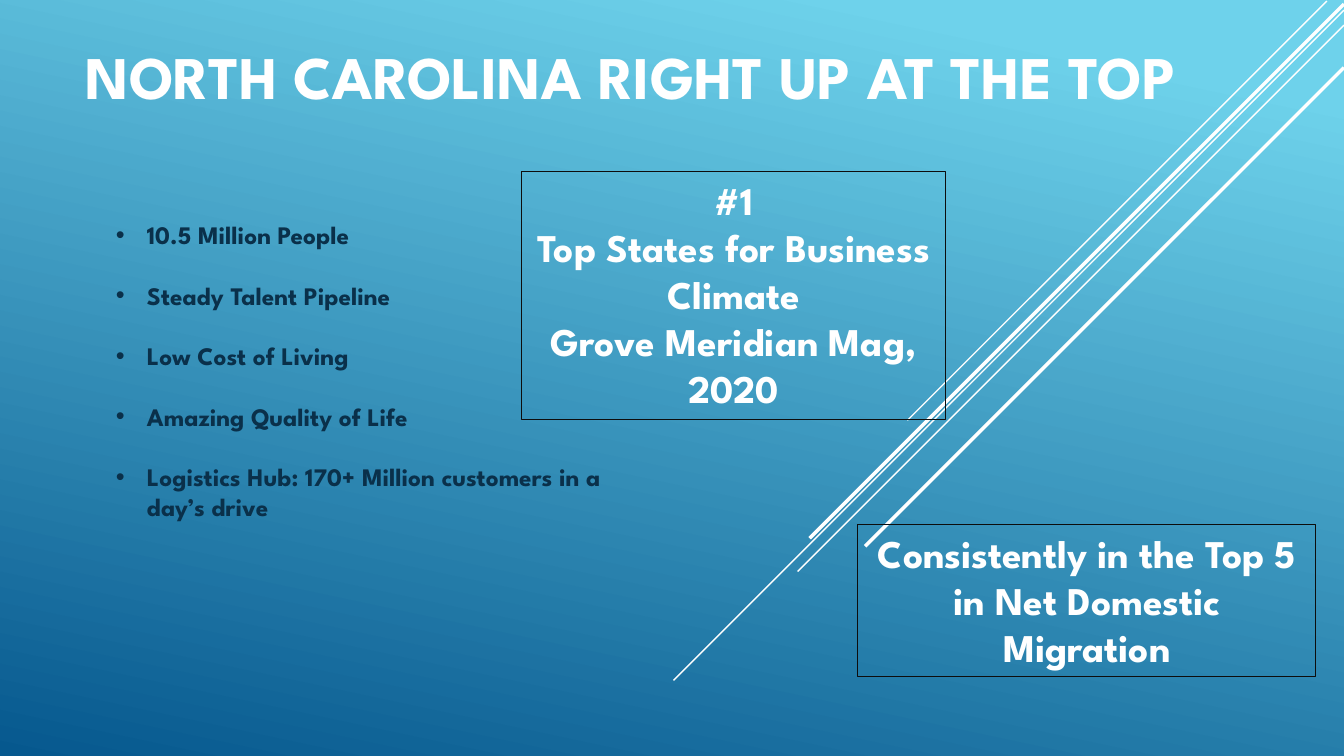
from lxml.etree import SubElement
from pptx import Presentation
from pptx.dml.color import RGBColor
from pptx.enum.shapes import MSO_CONNECTOR, MSO_SHAPE
from pptx.enum.text import MSO_ANCHOR, MSO_AUTO_SIZE, PP_ALIGN
from pptx.oxml.ns import qn
from pptx.util import Inches, Pt

# Content
TITLE = "NORTH CAROLINA RIGHT UP AT THE TOP"
STRENGTHS = [
    "10.5 Million People",
    "Steady Talent Pipeline",
    "Low Cost of Living",
    "Amazing Quality of Life",
    "Logistics Hub: 170+ Million customers in a day’s drive",
]
RANKINGS = [
    ((5.17, 1.7, 4.21, 2.46),
     ["#1", "Top States for Business Climate", "Grove Meridian Mag, 2020"]),
    ((8.51, 5.2, 4.54, 1.51),
     ["Consistently in the Top 5 in Net Domestic Migration"]),
]
# Diagonal rays: start x, start y, drop (each falls at 45 degrees), width in points
RAYS = [
    (13.16, 0.01, 4.16, 1),
    (13.33, 0.1, 6.65, 1),
    (13.33, 0.25, 5.42, 1),
    (13.33, 0.04, 5.3, 2.5),
    (13.33, 0.67, 4.75, 2.5),
]

# Style
FONT = "League Spartan"
WHITE = RGBColor(0xFF, 0xFF, 0xFF)
NAVY = RGBColor(0x0A, 0x30, 0x4A)
NEAR_BLACK = RGBColor(0x0D, 0x0D, 0x0D)
SKY = RGBColor(0x6E, 0xD2, 0xEB)
DEEP_BLUE = RGBColor(0x06, 0x58, 0x8E)
HANG = Inches(0.31)


def write(frame, lines, size, color, frame_format, paragraph_format):
    for name, value in frame_format.items():
        setattr(frame, name, value)
    for index, line in enumerate(lines):
        paragraph = frame.paragraphs[0] if index == 0 else frame.add_paragraph()
        for name, value in paragraph_format.items():
            setattr(paragraph, name, value)
        run = paragraph.add_run()
        run.text = line
        for name, value in {"name": FONT, "size": Pt(size), "bold": True}.items():
            setattr(run.font, name, value)
        run.font.color.rgb = color


def add_bullet(paragraph):
    properties = paragraph._p.get_or_add_pPr()
    properties.set("marL", str(HANG))
    properties.set("indent", str(-HANG))
    SubElement(properties, qn("a:buFont"), typeface="Arial")
    SubElement(properties, qn("a:buChar"), char="•")


deck = Presentation()
deck.slide_width, deck.slide_height = Inches(13.33), Inches(7.5)
slide = deck.slides.add_slide(deck.slide_layouts[6])
shapes = slide.shapes

# Background gradient
backdrop = slide.background.fill
backdrop.gradient()
backdrop.gradient_angle = 360 - 102
for stop, position, color in zip(backdrop.gradient_stops, (0.1, 1), (SKY, DEEP_BLUE)):
    stop.position = position
    stop.color.rgb = color

# Diagonal rays
for x, y, drop, width in RAYS:
    ray = shapes.add_connector(MSO_CONNECTOR.STRAIGHT, Inches(x), Inches(y),
                               Inches(x - drop), Inches(y + drop))
    ray.line.color.rgb = WHITE
    ray.line.width = Pt(width)
    SubElement(ray._element.spPr, qn("a:effectLst"))

# Title
title = shapes.add_textbox(*map(Inches, (0.75, 0.11, 12.08, 1.06)))
write(title.text_frame, [TITLE], 43.2, WHITE,
      {"word_wrap": True, "vertical_anchor": MSO_ANCHOR.BOTTOM},
      {"line_spacing": 0.9})

# Strengths list
growing = {"word_wrap": True, "auto_size": MSO_AUTO_SIZE.SHAPE_TO_FIT_TEXT}
strengths = shapes.add_textbox(*map(Inches, (1.05, 2.13, 5.24, 3.43)))
write(strengths.text_frame, STRENGTHS, 18, NAVY, growing, {"space_after": Pt(21.6)})
for strength in strengths.text_frame.paragraphs:
    add_bullet(strength)

# Ranking boxes
for place, lines in RANKINGS:
    ranking = shapes.add_shape(MSO_SHAPE.RECTANGLE, *map(Inches, place))
    ranking.shadow.inherit = False
    ranking.fill.background()
    ranking.line.color.rgb = NEAR_BLACK
    ranking.line.width = Pt(0.75)
    write(ranking.text_frame, lines, 28, WHITE,
          {**growing, "vertical_anchor": MSO_ANCHOR.TOP},
          {"alignment": PP_ALIGN.CENTER})

deck.save("out.pptx")
